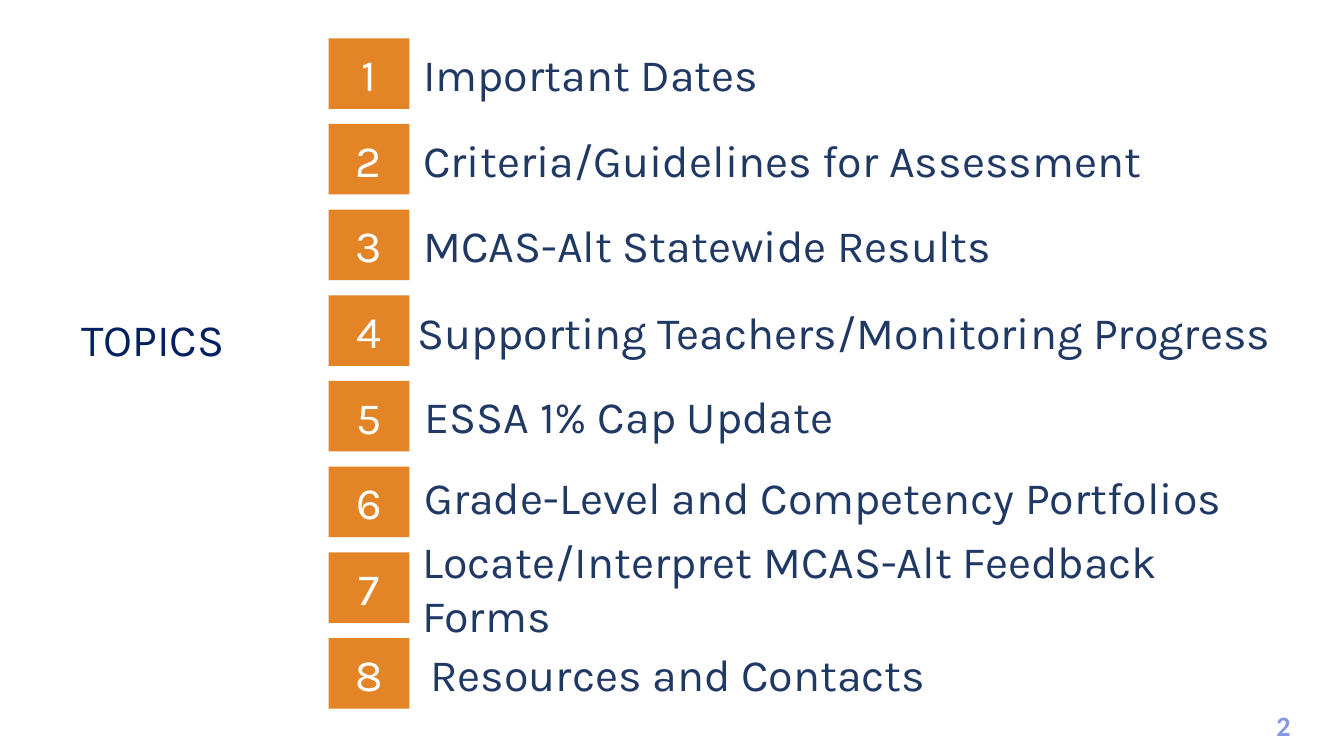
from dataclasses import dataclass

from pptx import Presentation
from pptx.dml.color import RGBColor
from pptx.enum.shapes import MSO_SHAPE
from pptx.enum.text import MSO_ANCHOR, MSO_AUTO_SIZE, PP_ALIGN
from pptx.util import Pt

RECT = MSO_SHAPE.RECTANGLE
TOP, MIDDLE = MSO_ANCHOR.TOP, MSO_ANCHOR.MIDDLE
LEFT, CENTER = PP_ALIGN.LEFT, PP_ALIGN.CENTER
NO_FIT = MSO_AUTO_SIZE.NONE
PX = 9144
TITLE_ONLY = 5


@dataclass(frozen=True)
class Theme:
    badge: str = "E38526"
    white: str = "FFFFFF"
    title: str = "002060"
    topic: str = "203864"
    page: str = "8397E7"
    font: str = "Karla"
    page_font: str = "Calibri"
    text_size: int = 32
    page_size: int = 20


THEME = Theme()

FIRST_TOP, PITCH = 38, 85
BADGE_LEFT, BADGE_W, BADGE_H = 326, 80, 70
LABEL_RIGHT = 1289
TOPICS = [
    ("Important Dates", 410, 0),
    ("Criteria/Guidelines for Assessment", 410, 0),
    ("MCAS-Alt Statewide Results", 410, 0),
    ("Supporting Teachers/Monitoring Progress", 404, 1),
    ("ESSA 1% Cap Update", 411, -1),
    ("Grade-Level and Competency Portfolios", 411, -5),
    ("Locate/Interpret MCAS-Alt Feedback Forms", 409, 0),
    ("Resources and Contacts", 417, 0),
]


def box(*lengths):
    return [n * PX for n in lengths]


def write(sp, text, color, align=LEFT, anchor=MIDDLE,
          font=THEME.font, size=THEME.text_size, bold=False):
    tf = sp.text_frame
    tf.word_wrap = True
    tf.auto_size = NO_FIT
    tf.vertical_anchor = anchor
    p = tf.paragraphs[0]
    p.alignment = align
    r = p.add_run()
    r.text = text
    r.font.name = font
    r.font.size = Pt(size)
    r.font.bold = bold
    r.font.color.rgb = RGBColor.from_string(color)


def add_title(s, text, left, top, width, height):
    sp = s.shapes.title
    sp.left, sp.top, sp.width, sp.height = box(left, top, width, height)
    write(sp, text, THEME.title, CENTER, TOP)


def add_badge(shapes, number, top):
    sp = shapes.add_shape(RECT, *box(BADGE_LEFT, top, BADGE_W, BADGE_H))
    sp.shadow.inherit = False
    sp.fill.solid()
    sp.fill.fore_color.rgb = RGBColor.from_string(THEME.badge)
    sp.line.fill.background()
    write(sp, str(number), THEME.white, CENTER)


def add_label(shapes, text, left, top):
    sp = shapes.add_textbox(*box(left, top, LABEL_RIGHT - left, BADGE_H))
    write(sp, text, THEME.topic)


def add_topic(s, index, text, left, shift):
    top = FIRST_TOP + index * PITCH
    group = s.shapes.add_group_shape()
    add_badge(group.shapes, index + 1, top)
    add_label(group.shapes, text, left, top + shift)


def add_page_number(s, number):
    sp = s.shapes.add_textbox(*box(1242, 698, 62, 44))
    write(sp, str(number), THEME.page, CENTER, TOP,
          THEME.page_font, THEME.page_size, True)


def main():
    prs = Presentation()
    prs.slide_width, prs.slide_height = box(1333, 750)
    s = prs.slides.add_slide(prs.slide_layouts[TITLE_ONLY])
    add_page_number(s, 2)
    add_title(s, "TOPICS", 0, 304, 303, 64)
    for index, (text, left, shift) in enumerate(TOPICS):
        add_topic(s, index, text, left, shift)
    prs.save("out.pptx")


if __name__ == "__main__":
    main()
